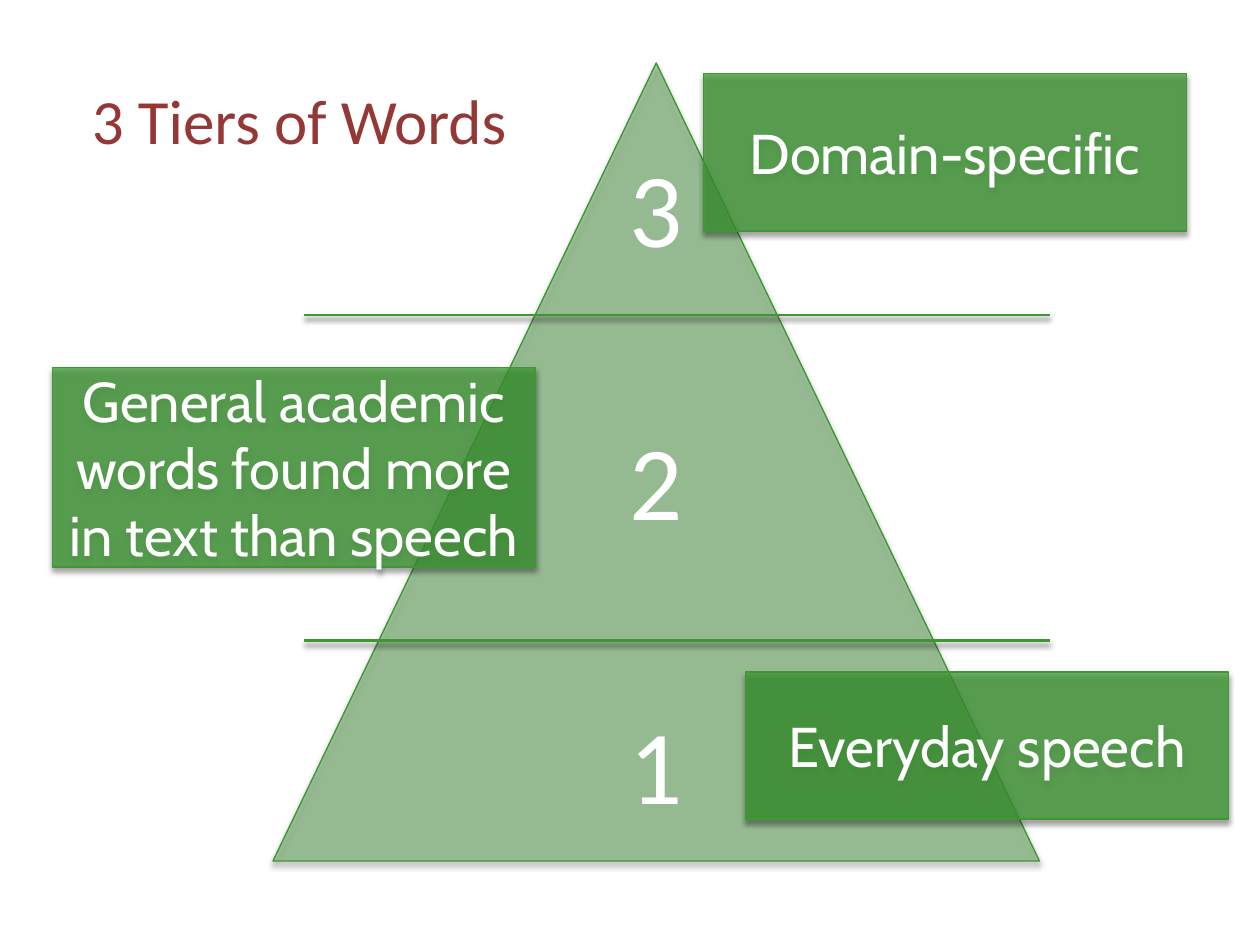
import dataclasses

import lxml.etree
import pptx
import pptx.dml.color
import pptx.enum.shapes
import pptx.enum.text
import pptx.oxml.ns
import pptx.slide
import pptx.util

Pt = pptx.util.Pt
qn = pptx.oxml.ns.qn
Shape = pptx.enum.shapes.MSO_SHAPE
Align = pptx.enum.text.PP_ALIGN
Anchor = pptx.enum.text.MSO_ANCHOR
Fit = pptx.enum.text.MSO_AUTO_SIZE


@dataclasses.dataclass(frozen=True)
class Theme:
    green: str = "3D9833"
    white: str = "FFFFFF"
    red: str = "953735"
    black: str = "000000"
    plain: str = "Calibri"
    label: str = "Cabin"
    title_size: int = 36
    label_size: int = 32
    digit_size: int = 60
    edge: float = 0.79
    rule: float = 1.5


def tint(code):
    return pptx.dml.color.RGBColor.from_string(code)


def apply(target, form):
    for name, value in form.items():
        setattr(target, name, value)


def fade(color, percent):
    alpha = lxml.etree.SubElement(color, qn("a:alpha"))
    alpha.set("val", str(percent * 1000))


@dataclasses.dataclass
class Painter:
    theme: Theme
    slide: pptx.slide.Slide

    def cast(self, effects):
        outer = lxml.etree.SubElement(effects, qn("a:outerShdw"))
        form = {"blurRad": Pt(3), "dist": Pt(2.4), "dir": 90 * 60000, "rotWithShape": 0}
        for name, value in form.items():
            outer.set(name, str(int(value)))
        color = lxml.etree.SubElement(outer, qn("a:srgbClr"))
        color.set("val", self.theme.black)
        fade(color, 45)

    def stroke(self, item, width):
        item.line.color.rgb = tint(self.theme.green)
        item.line.width = Pt(width)

    def letter(self, frame, text, font, size, color, form):
        apply(frame, {"word_wrap": True, **form})
        para = frame.paragraphs[0]
        para.alignment = Align.CENTER
        run = para.add_run()
        run.text = text
        apply(run.font, {"name": font, "size": Pt(size)})
        run.font.color.rgb = tint(color)

    def shape(self, kind, box, solid):
        item = self.slide.shapes.add_shape(kind, *map(Pt, box))
        item.fill.solid()
        item.fill.fore_color.rgb = tint(self.theme.green)
        fade(item._element.spPr.find(qn("a:solidFill"))[0], solid)
        self.stroke(item, self.theme.edge)
        item.shadow.inherit = False
        self.cast(item._element.spPr.find(qn("a:effectLst")))
        return item

    def rule(self, left, right, top):
        item = self.slide.shapes.add_connector(
            pptx.enum.shapes.MSO_CONNECTOR.STRAIGHT, Pt(left), Pt(top), Pt(right), Pt(top))
        self.stroke(item, self.theme.rule)
        self.cast(lxml.etree.SubElement(item._element.spPr, qn("a:effectLst")))

    def label(self, text, box):
        item = self.shape(Shape.RECTANGLE, box, 76)
        self.letter(item.text_frame, text, self.theme.label, self.theme.label_size,
                    self.theme.white, {"vertical_anchor": Anchor.MIDDLE})

    def text(self, text, box, size, color):
        item = self.slide.shapes.add_textbox(*map(Pt, box))
        self.letter(item.text_frame, text, self.theme.plain, size, color,
                    {"auto_size": Fit.SHAPE_TO_FIT_TEXT})


def main():
    deck = pptx.Presentation()
    apply(deck, {"slide_width": Pt(720), "slide_height": Pt(540)})
    theme = Theme()
    paint = Painter(theme, deck.slides.add_slide(deck.slide_layouts[6]))

    paint.shape(Shape.ISOSCELES_TRIANGLE, (156, 36, 438, 456), 40)
    for top in (180, 366):
        paint.rule(174, 600, top)
    for digit, top in (("1", 396), ("2", 234), ("3", 78)):
        paint.text(digit, (318, top, 114, 80), theme.digit_size, theme.white)
    for words, left, top, height in (
        ("General academic words found more in text than speech", 30, 210, 114),
        ("Everyday speech", 426, 384, 84),
        ("Domain-specific", 402, 42, 90),
    ):
        paint.label(words, (left, top, 276, height))
    paint.text("3 Tiers of Words", (30, 43.2, 282, 51), theme.title_size, theme.red)

    deck.save("out.pptx")


if __name__ == "__main__":
    main()
